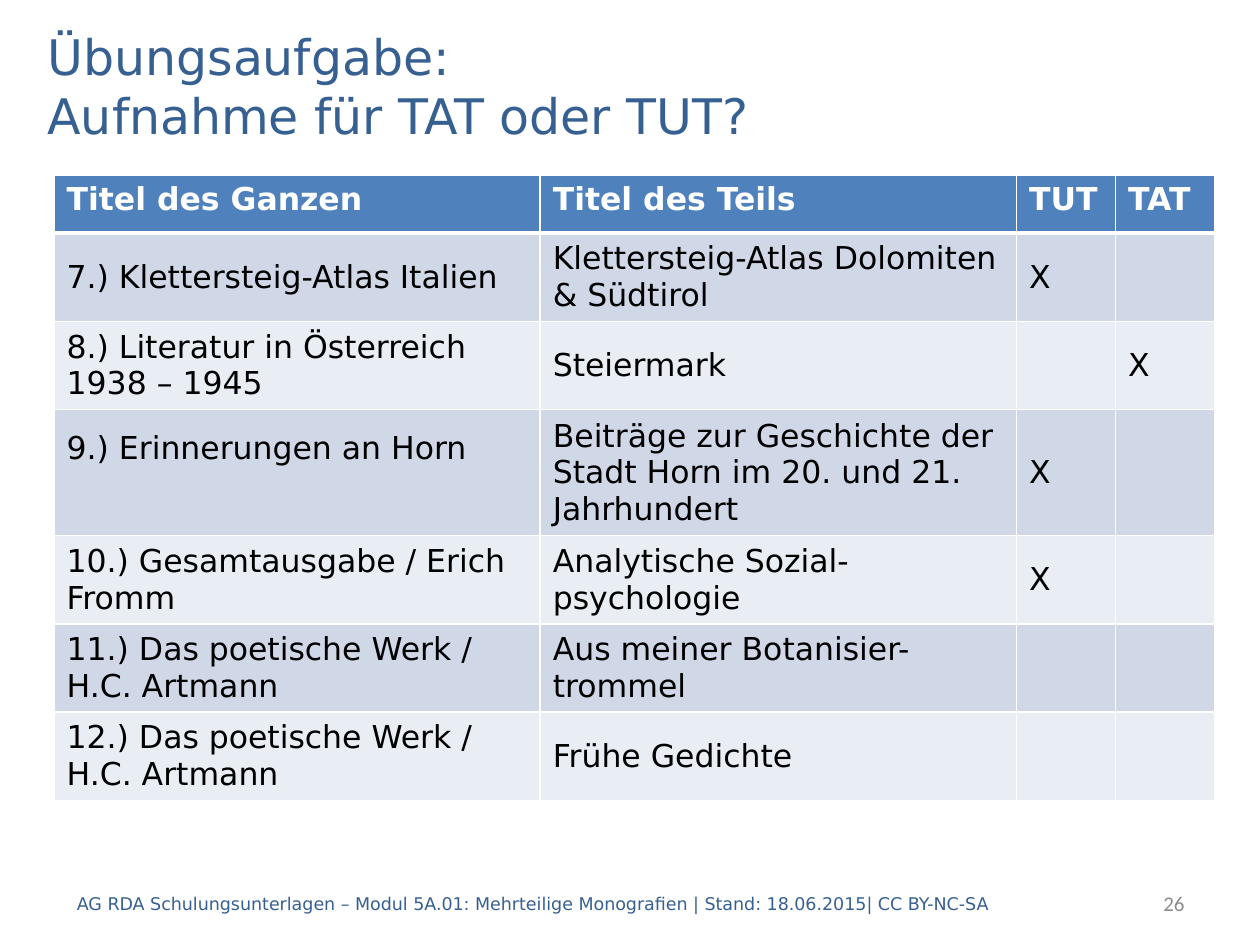
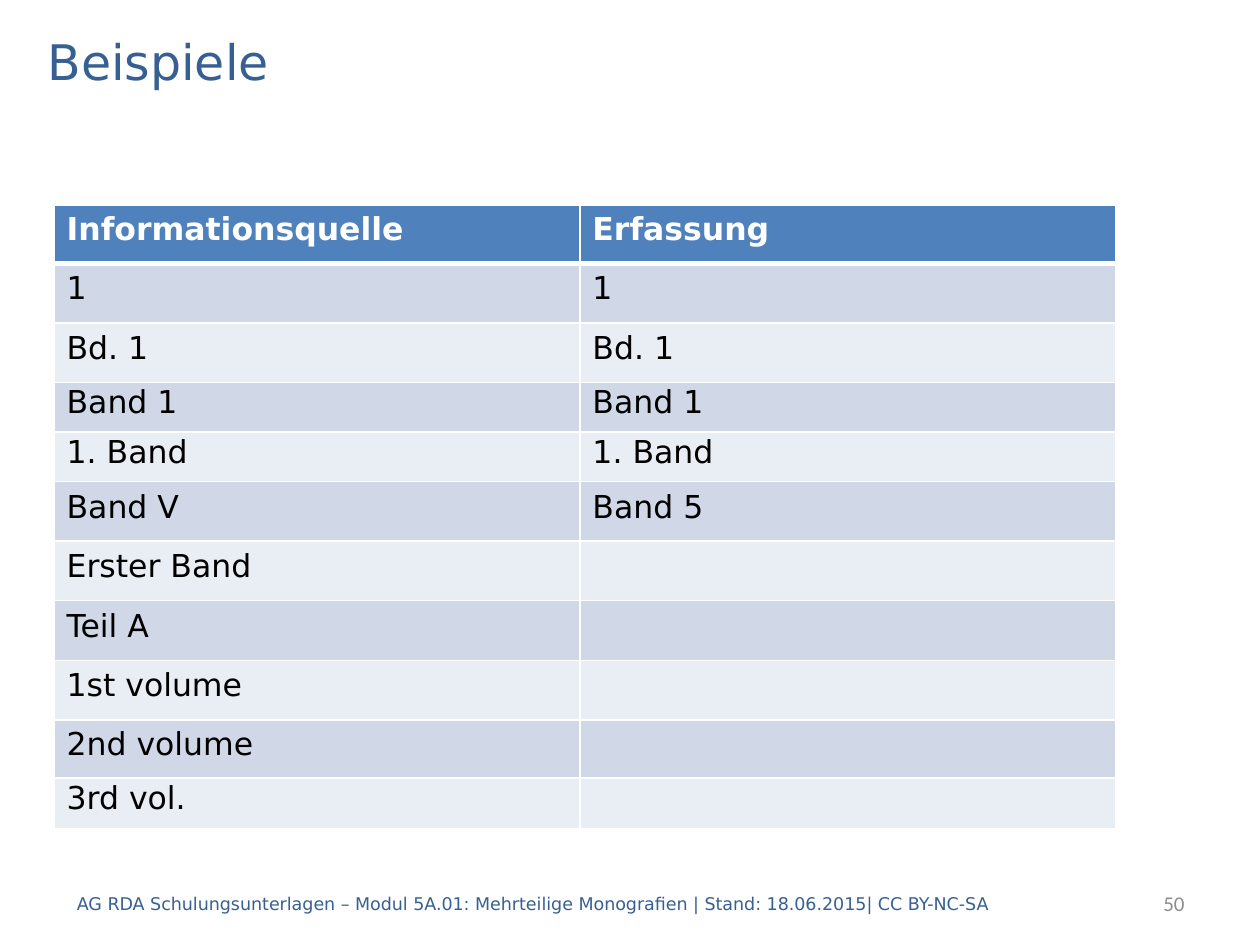
from dataclasses import dataclass

from lxml import etree
from pptx import Presentation
from pptx.dml.color import RGBColor
from pptx.enum.text import MSO_ANCHOR, PP_ALIGN
from pptx.oxml.ns import qn
from pptx.util import Cm, Pt

MIDDLE, TOP = MSO_ANCHOR.MIDDLE, MSO_ANCHOR.TOP
LEFT, RIGHT = PP_ALIGN.LEFT, PP_ALIGN.RIGHT


@dataclass(frozen=True)
class Theme:
    accent: str = "376092"
    number: str = "8C8C8C"
    header: str = "4F81BD"
    bands: tuple = ("D0D8E8", "E9EDF4")
    white: str = "FFFFFF"
    black: str = "000000"
    font: str = "DejaVu Sans"
    number_font: str = "Calibri"
    title_size: int = 28
    table_size: int = 18
    footer_size: int = 10
    number_size: int = 12


T = Theme()

# Content; lengths are in centimetres
FOOTER = ("AG RDA Schulungsunterlagen – Modul 5A.01: Mehrteilige Monografien"
          " | Stand: 18.06.2015| CC BY-NC-SA")

SLIDES = [
    dict(
        title=["Übungsaufgabe:", "Aufnahme für TAT oder TUT?"],
        title_height=2.41, number="26", table_top=3.53, line_spacing=None,
        cols=[9.8, 9.6, 2, 2],
        heights=[1.17, 1.24, 1, 1.2, 1, 1.17, 1.17],
        bottom_margins={(3, 0): 1.1},
        rows=[
            ("Titel des Ganzen", "Titel des Teils", "TUT", "TAT"),
            ("7.) Klettersteig-Atlas Italien",
             "Klettersteig-Atlas Dolomiten & Südtirol", "X", ""),
            ("8.) Literatur in Österreich 1938 – 1945", "Steiermark", "", "X"),
            ("9.) Erinnerungen an Horn",
             "Beiträge zur Geschichte der Stadt Horn im 20. und 21. Jahrhundert", "X", ""),
            ("10.) Gesamtausgabe / Erich Fromm", "Analytische Sozial-psychologie", "X", ""),
            ("11.) Das poetische Werk / H.C. Artmann", "Aus meiner Botanisier-trommel", "", ""),
            ("12.) Das poetische Werk / H.C. Artmann", "Frühe Gedichte", "", ""),
        ],
    ),
    dict(
        title=["Beispiele"],
        title_height=1.42, number="50", table_top=4.14, line_spacing=16,
        cols=[10.6, 10.8],
        heights=[1.17, 1.2, 1.2, 1, 1, 1.2, 1.2, 1.2, 1.2, 1.17, 1],
        bottom_margins={},
        rows=[
            ("Informationsquelle", "Erfassung"),
            ("1", "1"),
            ("Bd. 1", "Bd. 1"),
            ("Band 1", "Band 1"),
            ("1. Band", "1. Band"),
            ("Band V", "Band 5"),
            ("Erster Band", ""),
            ("Teil A", ""),
            ("1st volume", ""),
            ("2nd volume", ""),
            ("3rd vol.", ""),
        ],
    ),
]


def add_run(p, text, size, color, font=T.font, bold=False):
    r = p.add_run()
    r.text = text
    r.font.size, r.font.name, r.font.bold = Pt(size), font, bold
    r.font.color.rgb = RGBColor.from_string(color)


def add_text(s, box, lines, size, color, font=T.font, align=LEFT):
    tf = s.shapes.add_textbox(*map(Cm, box)).text_frame
    tf.word_wrap, tf.vertical_anchor = True, MIDDLE
    p = tf.paragraphs[0]
    p.alignment = align
    for i, line in enumerate(lines):
        if i:
            p.add_line_break()
        add_run(p, line, size, color, font)


def set_borders(cell, top, bottom):
    tc_pr = cell._tc.get_or_add_tcPr()
    for side, width in (("L", 1), ("R", 1), ("T", top), ("B", bottom)):
        ln = etree.SubElement(tc_pr, qn(f"a:ln{side}"), w=str(Pt(width)))
        fill = etree.SubElement(ln, qn("a:solidFill"))
        etree.SubElement(fill, qn("a:srgbClr"), val=T.white)


def fill_cell(cell, text, row, line_spacing):
    is_header = row == 0
    # The thick rule lies between the header and the first body row
    set_borders(cell, top=3 if row == 1 else 1, bottom=3 if is_header else 1)
    cell.fill.solid()
    cell.fill.fore_color.rgb = RGBColor.from_string(
        T.header if is_header else T.bands[(row - 1) % 2])
    cell.vertical_anchor = TOP if is_header else MIDDLE
    if not text:
        return
    p = cell.text_frame.paragraphs[0]
    if not is_header:
        p.space_before = p.space_after = Pt(6)
        if line_spacing:
            p.line_spacing = Pt(line_spacing)
    add_run(p, text, T.table_size, T.white if is_header else T.black, bold=is_header)


def add_table(s, data):
    rows, cols, heights = data["rows"], data["cols"], data["heights"]
    table = s.shapes.add_table(
        len(rows), len(cols), Cm(1.09), Cm(data["table_top"]),
        Cm(sum(cols)), Cm(sum(heights))).table
    table.first_row = table.horz_banding = False
    for column, width in zip(table.columns, cols):
        column.width = Cm(width)
    for i, (values, height) in enumerate(zip(rows, heights)):
        table.rows[i].height = Cm(height)
        for j, text in enumerate(values):
            fill_cell(table.cell(i, j), text, i, data["line_spacing"])
    for (i, j), margin in data["bottom_margins"].items():
        table.cell(i, j).margin_bottom = Cm(margin)


def add_slide(prs, data):
    s = prs.slides.add_slide(prs.slide_layouts[6])
    # Footer and slide number
    add_text(s, (1.3, 17.7, 21, 1.02), [FOOTER], T.footer_size, T.accent)
    add_text(s, (20.09, 17.7, 4.04, 1.02), [data["number"]], T.number_size,
             T.number, T.number_font, RIGHT)
    # Table and title
    add_table(s, data)
    add_text(s, (0.71, 0.51, 24, data["title_height"]), data["title"],
             T.title_size, T.accent)


def main():
    prs = Presentation()
    prs.slide_width, prs.slide_height = Cm(25.4), Cm(19.05)
    for data in SLIDES:
        add_slide(prs, data)
    prs.save("out.pptx")


if __name__ == "__main__":
    main()
